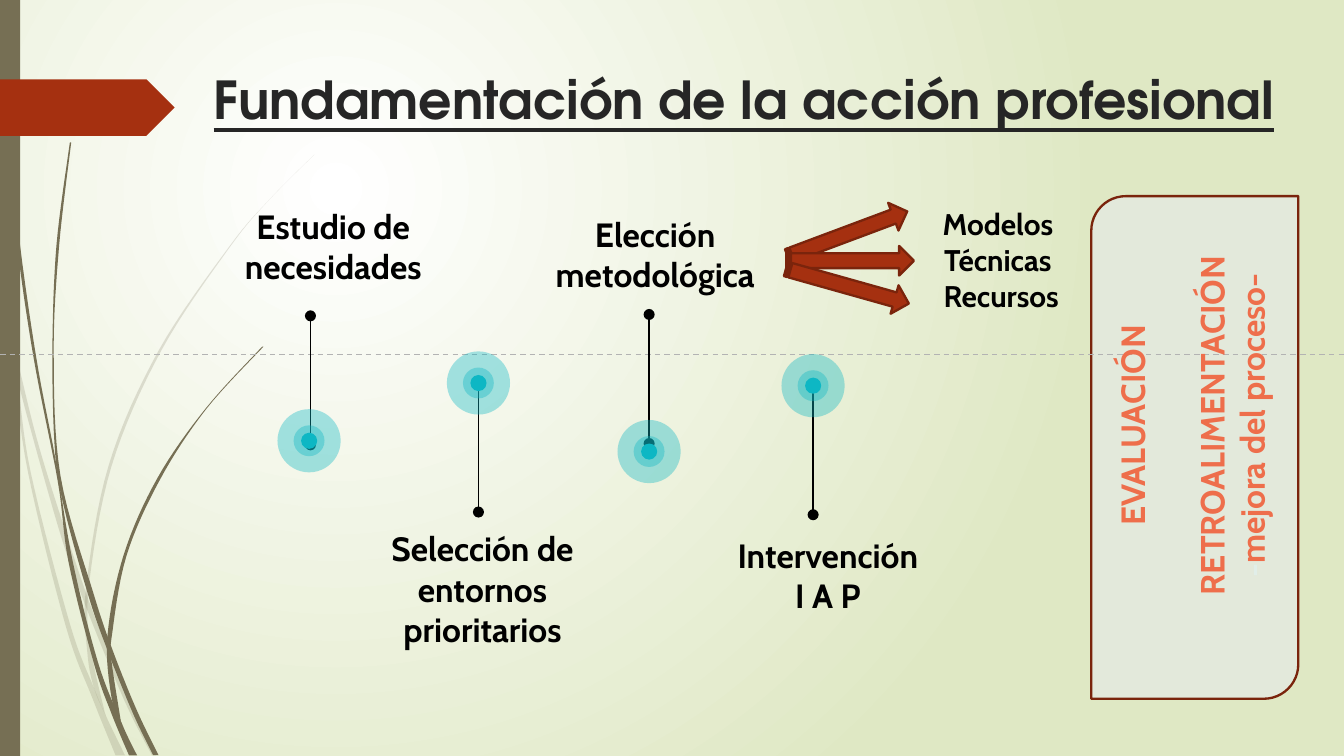
from dataclasses import dataclass

from pptx import Presentation
from pptx.dml.color import RGBColor
from pptx.enum.dml import MSO_LINE
from pptx.enum.shapes import MSO_CONNECTOR, MSO_SHAPE
from pptx.enum.text import MSO_ANCHOR, PP_ALIGN
from pptx.oxml.ns import qn
from pptx.oxml.xmlchemy import OxmlElement
from pptx.util import Inches, Pt

CENTER, LEFT = PP_ALIGN.CENTER, PP_ALIGN.LEFT
TOP, BOTTOM = MSO_ANCHOR.TOP, MSO_ANCHOR.BOTTOM
DASH, STRAIGHT = MSO_LINE.DASH, MSO_CONNECTOR.STRAIGHT
RECTANGLE, OVAL, PENTAGON = MSO_SHAPE.RECTANGLE, MSO_SHAPE.OVAL, MSO_SHAPE.PENTAGON
PANEL, ARROW = MSO_SHAPE.ROUND_2_DIAG_RECTANGLE, MSO_SHAPE.STRIPED_RIGHT_ARROW

SLIDE_WIDTH = 10
SLIDE_HEIGHT = SLIDE_WIDTH * 9 / 16


@dataclass(frozen=True)
class Theme:
    white: str = "FFFFFF"
    green: str = "DFE8C4"
    olive: str = "766F54"
    red: str = "A53010"
    dark_red: str = "7A240C"
    panel: str = "E3E9DB"
    gray: str = "B3B3B3"
    black: str = "000000"
    title: str = "262626"
    cyan: str = "0DB7C4"
    orange: str = "EE6E4B"
    faint: str = "E1EEE9"
    title_font: str = "TeX Gyre Adventor"
    body_font: str = "Cabin"
    title_size: int = 28
    body_size: int = 18
    list_size: int = 16


THEME = Theme()

# Each strand is its two edges, one downwards and one back up.
PALE_STRANDS = [
    ([(0, 2.24), (.08, 2.63), (.21, 3.52), (.49, 4.66), (.69, 5.2), (.86, 5.62)],
     [(.93, 5.62), (.79, 5.33), (.7, 5.12), (.52, 4.64), (.23, 3.52), (.13, 2.82),
      (.06, 2.41), (0, 2.11)]),
    ([(.11, 2.59), (.13, 2.82), (.43, 3.91), (.63, 4.49), (.92, 5.2), (1.13, 5.62)],
     [(1.16, 5.62), (.95, 5.19), (.69, 4.55), (.47, 3.9), (.27, 3.25), (.11, 2.59)]),
    ([(2.34, 1.15), (2.01, 1.48), (1.71, 1.83), (1.18, 2.61), (.81, 3.46),
      (.64, 4.38), (.65, 4.85), (.7, 5.12), (.79, 5.33)],
     [(.78, 5.3), (.68, 4.84), (.66, 4.38), (.83, 3.47), (1.2, 2.61),
      (1.71, 1.84), (2.01, 1.48), (2.34, 1.15)]),
]
DARK_STRANDS = [
    ([(.02, 0), (.05, .82), (.12, 1.75), (.25, 2.66), (.43, 3.58), (.51, 4.18),
      (.7, 4.94), (.83, 5.31), (.96, 5.62)],
     [(1.02, 5.62), (.91, 5.39), (.73, 4.93), (.54, 4.17), (.41, 3.4),
      (.27, 2.66), (.14, 1.74), (.06, .82), (.03, 0)]),
    ([(.52, 1.06), (.42, 1.83), (.39, 2.62), (.41, 3.37), (.48, 3.79),
      (.66, 4.44), (.8, 4.84), (.99, 5.31), (1.14, 5.62)],
     [(1.18, 5.62), (1.02, 5.29), (.85, 4.87), (.7, 4.43), (.45, 3.54),
      (.4, 2.62), (.44, 1.83), (.53, 1.06)]),
    ([(1.95, 2.58), (1.53, 3.04), (1.17, 3.56), (.92, 4.13), (.8, 4.73),
      (.83, 5.19), (.91, 5.39)],
     [(.9, 5.37), (.83, 4.92), (.83, 4.75), (.94, 4.14), (1.19, 3.57),
      (1.53, 3.05), (1.96, 2.58)]),
]

# Line x, line top, bullseye centre, label box (left, top, width), label paragraphs
STAGES = [
    (2.31, 2.35, (2.3, 3.28), (1.43, 1.43, 2.1), ["Estudio de necesidades"]),
    (3.56, 2.85, (3.56, 2.85), (2.62, 3.83, 1.94), ["Selección de entornos prioritarios"]),
    (4.83, 2.34, (4.83, 3.36), (3.95, 1.49, 1.85), ["Elección metodológica"]),
    (6.05, 2.87, (6.05, 2.87), (5.19, 3.88, 1.94), ["Intervención", "I A P"]),
]
LINE_LENGTH = 0.96
ARROWS = [(5.83, 1.63, 339.5), (5.85, 1.83, 0), (5.83, 2.02, 15.7)]


def color(value):
    return RGBColor.from_string(value)


def append_element(parent, tag, **attributes):
    element = OxmlElement(tag)
    for name, value in attributes.items():
        element.set(name, str(value))
    parent.append(element)
    return element


def paint(shape, fill, line=None, opacity=100):
    shape.shadow.inherit = False
    shape.fill.solid()
    shape.fill.fore_color.rgb = color(fill)
    if opacity < 100:
        rgb = shape.fill._xPr.find(qn("a:solidFill"))[0]
        append_element(rgb, "a:alpha", val=opacity * 1000)
    if line:
        shape.line.color.rgb = color(line)
        shape.line.width = Pt(1.25)
    else:
        shape.line.fill.background()


def add_preset(slide, kind, left, top, width, height, fill, **style):
    shape = slide.shapes.add_shape(
        kind, Inches(left), Inches(top), Inches(width), Inches(height))
    paint(shape, fill, **style)
    return shape


def add_line(slide, start, end, line_color):
    connector = slide.shapes.add_connector(STRAIGHT, *map(Inches, start + end))
    connector.line.color.rgb = color(line_color)
    connector.line.width = Pt(0.75)
    append_element(connector._element.spPr, "a:effectLst")
    return connector


def smooth(points, steps=8):
    """Catmull-Rom curve through the points."""
    padded = [points[0], *points, points[-1]]
    curve = [points[0]]
    for a, b, c, d in zip(padded, padded[1:], padded[2:], padded[3:]):
        for step in range(1, steps + 1):
            t = step / steps
            curve.append(tuple(
                q + t / 2 * (r - p + t * (2 * p - 5 * q + 4 * r - s + t * (3 * (q - r) + s - p)))
                for p, q, r, s in zip(a, b, c, d)))
    return curve


def add_strand(slide, edges, opacity):
    outline = [(Inches(x), Inches(y)) for edge in edges for x, y in smooth(edge)]
    builder = slide.shapes.build_freeform(*outline[0])
    builder.add_line_segments(outline[1:], close=True)
    paint(builder.convert_to_shape(), THEME.olive, opacity=opacity)


def format_frame(frame, anchor=TOP):
    frame.word_wrap = True
    frame.vertical_anchor = anchor
    frame.margin_left = frame.margin_right = Inches(0.1)
    frame.margin_top = frame.margin_bottom = Inches(0.1)


def add_label(slide, left, top, width, height, paragraphs, size=THEME.body_size):
    """Centred bold text; each paragraph is a list of (text, colour) runs."""
    box = slide.shapes.add_textbox(Inches(left), Inches(top), Inches(width), Inches(height))
    frame = box.text_frame
    format_frame(frame)
    for index, runs in enumerate(paragraphs):
        paragraph = frame.add_paragraph() if index else frame.paragraphs[0]
        paragraph.alignment = CENTER
        paragraph.font.name, paragraph.font.size = THEME.body_font, Pt(size)
        paragraph.font.bold = True
        for text, text_color in runs:
            run = paragraph.add_run()
            run.text = text
            run.font.color.rgb = color(text_color)
    return box


def add_bullseye(slide, x, y):
    for size, opacity in ((0.47, 37), (0.23, 37), (0.12, 100)):
        add_preset(slide, OVAL, x - size / 2, y - size / 2, size, size,
                   THEME.cyan, opacity=opacity)


def add_stage(slide, x, top, target, label, texts):
    connector = add_line(slide, (x, top), (x, top + LINE_LENGTH), THEME.black)
    line = connector.line._get_or_add_ln()
    for end in ("a:headEnd", "a:tailEnd"):
        append_element(line, end, type="oval")
    add_label(slide, *label, 0.45, [[(text, THEME.black)] for text in texts])
    add_bullseye(slide, *target)


def set_background(slide):
    fill = slide.background.fill
    fill.gradient()
    for stop, value, position in zip(fill.gradient_stops, (THEME.white, THEME.green), (0, 1)):
        stop.color.rgb = color(value)
        stop.position = position
    gradient = next(slide.element.iter(qn("a:gradFill")))
    gradient.remove(gradient.find(qn("a:lin")))
    circle = append_element(gradient, "a:path", path="circle")
    append_element(circle, "a:fillToRect", l=50000, t=50000, r=100000, b=100000)


def set_title(slide, text):
    title = slide.shapes.title
    title.left, title.top, title.width, title.height = map(Inches, (1.49, 0.37, 8.41, 0.7))
    format_frame(title.text_frame, BOTTOM)
    title.text_frame.text = text
    paragraph = title.text_frame.paragraphs[0]
    paragraph.alignment = LEFT
    font = paragraph.font
    font.name, font.size = THEME.title_font, Pt(THEME.title_size)
    font.bold = font.underline = True
    font.color.rgb = color(THEME.title)


def main():
    presentation = Presentation()
    presentation.slide_width = Inches(SLIDE_WIDTH)
    presentation.slide_height = Inches(SLIDE_HEIGHT)
    slide = presentation.slides.add_slide(presentation.slide_layouts[5])
    set_background(slide)
    set_title(slide, "Fundamentación de la acción profesional")
    for strands, opacity in ((PALE_STRANDS, 20), (DARK_STRANDS, 100)):
        for edges in strands:
            add_strand(slide, edges, opacity)
    add_preset(slide, RECTANGLE, 0, 0, 0.15, SLIDE_HEIGHT, THEME.olive)
    add_preset(slide, PENTAGON, 0, 0.59, 1.3, 0.42, THEME.red)
    add_preset(slide, PANEL, 8.12, 1.46, 1.54, 3.74, THEME.panel, line=THEME.dark_red)
    add_line(slide, (0, 2.64), (10.01, 2.64), THEME.gray).line.dash_style = DASH
    for stage in STAGES:
        add_stage(slide, *stage)
    add_label(slide, 6.5, 1.43, 1.85, 1,
              [[(text, THEME.black)] for text in ("Modelos", "Técnicas", " Recursos")],
              THEME.list_size)
    feedback = add_label(slide, 7.47, 2.3, 3.13, 1.73, [
        [("EVALUACIÓN", THEME.orange)],
        [("RETROALIMENTACIÓN", THEME.orange), (" -", THEME.faint),
         ("mejora del proceso-", THEME.orange)]])
    feedback.rotation = 270
    feedback.text_frame.paragraphs[1].space_before = Pt(21)
    for left, top, angle in ARROWS:
        arrow = add_preset(slide, ARROW, left, top, 0.95, 0.22, THEME.red, line=THEME.dark_red)
        arrow.rotation = angle
    presentation.save("out.pptx")


if __name__ == "__main__":
    main()
